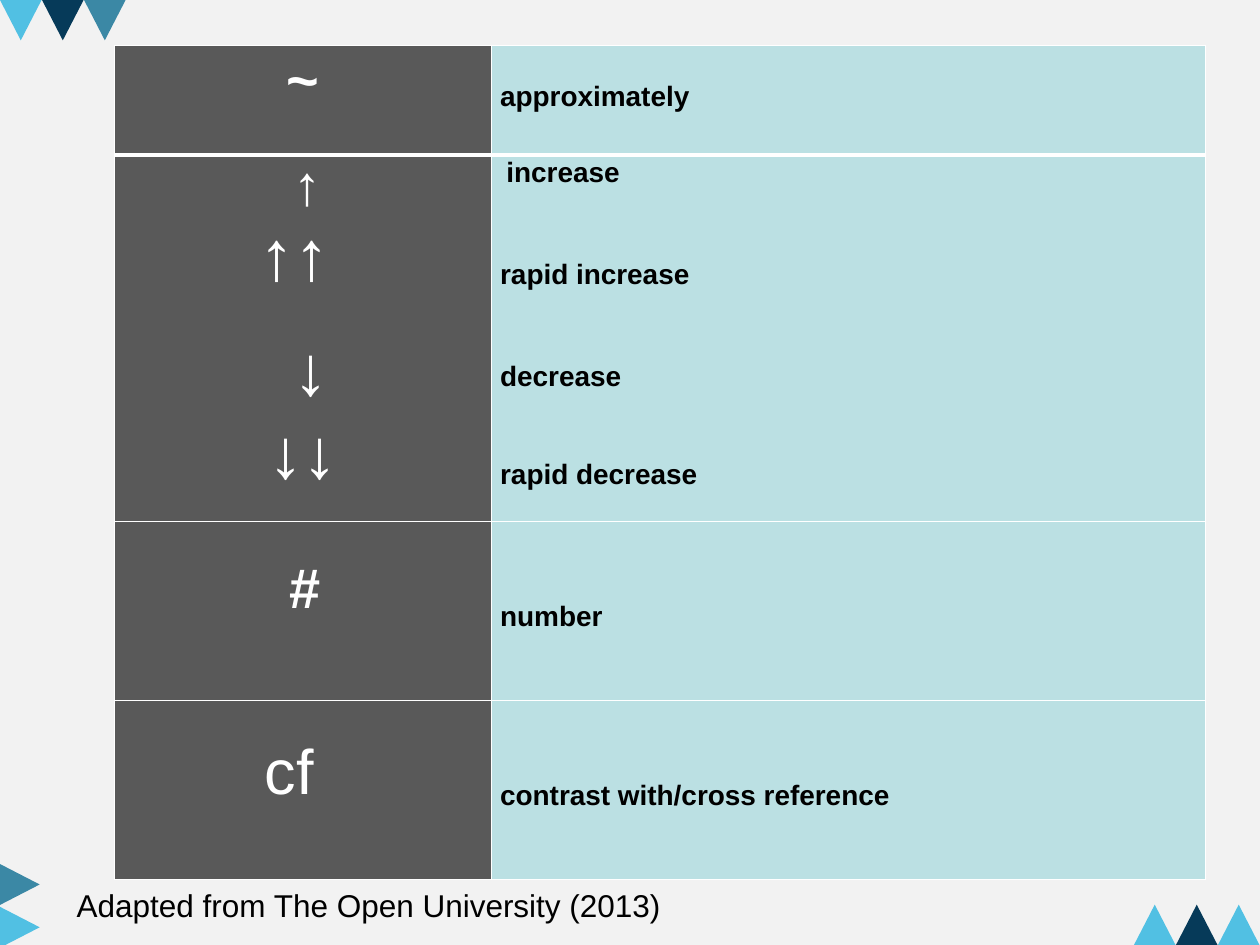
import pptx
import pptx.dml.color
import pptx.enum.shapes
import pptx.enum.text
import pptx.oxml
import pptx.oxml.ns
import pptx.util

Inches = pptx.util.Inches
Pt = pptx.util.Pt
RGBColor = pptx.dml.color.RGBColor
Align = pptx.enum.text.PP_ALIGN

BACKGROUND = RGBColor(0xF2, 0xF2, 0xF2)
SKY = RGBColor(0x51, 0xC0, 0xE3)
NAVY = RGBColor(0x06, 0x3A, 0x59)
TEAL = RGBColor(0x3B, 0x88, 0xA5)
GREY = RGBColor(0x59, 0x59, 0x59)
PALE = RGBColor(0xBB, 0xE0, 0xE3)
WHITE = RGBColor(0xFF, 0xFF, 0xFF)
BLACK = RGBColor(0, 0, 0)

SIDE_MARGIN = 0.07


class SlideBuilder:
    font = "Arial"

    def __init__(self, presentation):
        self.slide = presentation.slides.add_slide(presentation.slide_layouts[6])
        fill = self.slide.background.fill
        fill.solid()
        fill.fore_color.rgb = BACKGROUND

    def triangle(self, left, top, color, rotation=0):
        shape = self.slide.shapes.add_shape(
            pptx.enum.shapes.MSO_SHAPE.ISOSCELES_TRIANGLE,
            Inches(left), Inches(top), Inches(0.33), Inches(0.32))
        shape.rotation = rotation
        shape.shadow.inherit = False
        shape.fill.solid()
        shape.fill.fore_color.rgb = color
        shape.line.fill.background()

    def table(self, left, top, widths, heights):
        frame = self.slide.shapes.add_table(
            len(heights), len(widths), Inches(left), Inches(top),
            Inches(sum(widths)), Inches(sum(heights)))
        table = frame.table
        table.first_row = table.horz_banding = False
        for column, width in zip(table.columns, widths):
            column.width = Inches(width)
        for row, height in zip(table.rows, heights):
            row.height = Inches(height)
        return table

    def borders(self, cell, top, bottom):
        """Draw white cell borders; top and bottom are widths in points."""
        properties = cell._tc.get_or_add_tcPr()
        sides = (("lnL", 1), ("lnR", 1), ("lnT", top), ("lnB", bottom))
        for index, (side, width) in enumerate(sides):
            properties.insert(index, pptx.oxml.parse_xml(
                f'<a:{side} {pptx.oxml.ns.nsdecls("a")} w="{Pt(width)}">'
                f'<a:solidFill><a:srgbClr val="{WHITE}"/></a:solidFill></a:{side}>'))

    def cell(self, cell, fill, top=0, left=0, right=0):
        """Fill a cell and set its insets; left and right add to the side margin."""
        cell.fill.solid()
        cell.fill.fore_color.rgb = fill
        cell.margin_top, cell.margin_bottom = Inches(top), 0
        cell.margin_left = Inches(SIDE_MARGIN + left)
        cell.margin_right = Inches(SIDE_MARGIN + right)

    def paragraphs(self, text_frame, entries, color, bold=True, align=Align.LEFT):
        """Each entry is (text, size, line spacing, points before, left indent)."""
        text_frame.text = "\n".join(entry[0] for entry in entries)
        for paragraph, entry in zip(text_frame.paragraphs, entries):
            _, size, spacing, before, indent = entry
            paragraph.alignment = align
            paragraph.line_spacing = spacing
            if before:
                paragraph.space_before = Pt(before)
            if indent:
                paragraph._p.get_or_add_pPr().set("marL", str(Inches(indent)))
            for run in paragraph.runs:
                run.font.name = self.font
                run.font.size = Pt(size)
                run.font.bold = bold
                run.font.color.rgb = color

    def caption(self, text, left, top, width, height):
        box = self.slide.shapes.add_textbox(
            Inches(left), Inches(top), Inches(width), Inches(height))
        box.text_frame.word_wrap = True
        self.paragraphs(box.text_frame, [(text, 18, 1.0, 0, 0)], BLACK, bold=False)


def meaning(text, before=0, indent=0):
    return (text, 16, 1.07, before, indent)


# Symbol insets, symbol lines, symbol bold, meaning inset, meaning lines
ROWS = [
    (dict(), [("~", 32, 1.07, 0, 0)], True, 0.27, [meaning("approximately")]),
    (dict(right=0.14),
     [("↑", 32, 1.0, 0, 0.21), ("↑↑", 40, 1.0, 0, 0),
      ("↓", 40, 1.0, 20.7, 0.27), ("↓↓", 40, 1.07, 0, 0.14)], True, 0,
     [meaning("increase", indent=0.05), meaning("rapid increase", 39.3),
      meaning("decrease", 39.3), meaning("rapid decrease", 36.9)]),
    (dict(top=0.29, left=0.03), [("#", 32, 1.0, 0, 0)], True, 0.62,
     [meaning("number")]),
    (dict(top=0.29, right=0.22), [("cf", 36, 1.0, 0, 0)], False, 0.62,
     [meaning("contrast with/cross reference")]),
]


def main():
    presentation = pptx.Presentation()
    presentation.slide_width, presentation.slide_height = Inches(10), Inches(7.5)
    builder = SlideBuilder(presentation)

    for index, color in enumerate((SKY, NAVY, TEAL)):
        builder.triangle(index / 3, 0, color, rotation=180)
    for index, color in enumerate((SKY, NAVY, SKY)):
        builder.triangle(9 + index / 3, 7.18, color)
    for index, color in enumerate((TEAL, SKY)):
        builder.triangle(-0.01, 6.86 + 0.34 * index, color, rotation=90)

    table = builder.table(0.91, 0.36, (2.99, 5.67), (0.87, 2.91, 1.42, 1.42))
    for index, (insets, symbols, bold, top, meanings) in enumerate(ROWS):
        symbol_cell, meaning_cell = table.rows[index].cells
        builder.cell(symbol_cell, GREY, **insets)
        builder.paragraphs(symbol_cell.text_frame, symbols, WHITE, bold, Align.CENTER)
        builder.cell(meaning_cell, PALE, top=top)
        builder.paragraphs(meaning_cell.text_frame, meanings, BLACK)
        for cell in (symbol_cell, meaning_cell):
            builder.borders(cell, top=3 if index == 1 else 1,
                            bottom=3 if index == 0 else 1)

    builder.caption("Adapted from The Open University (2013)", 0.51, 6.98, 4.92, 0.4)
    presentation.save("out.pptx")


if __name__ == "__main__":
    main()
